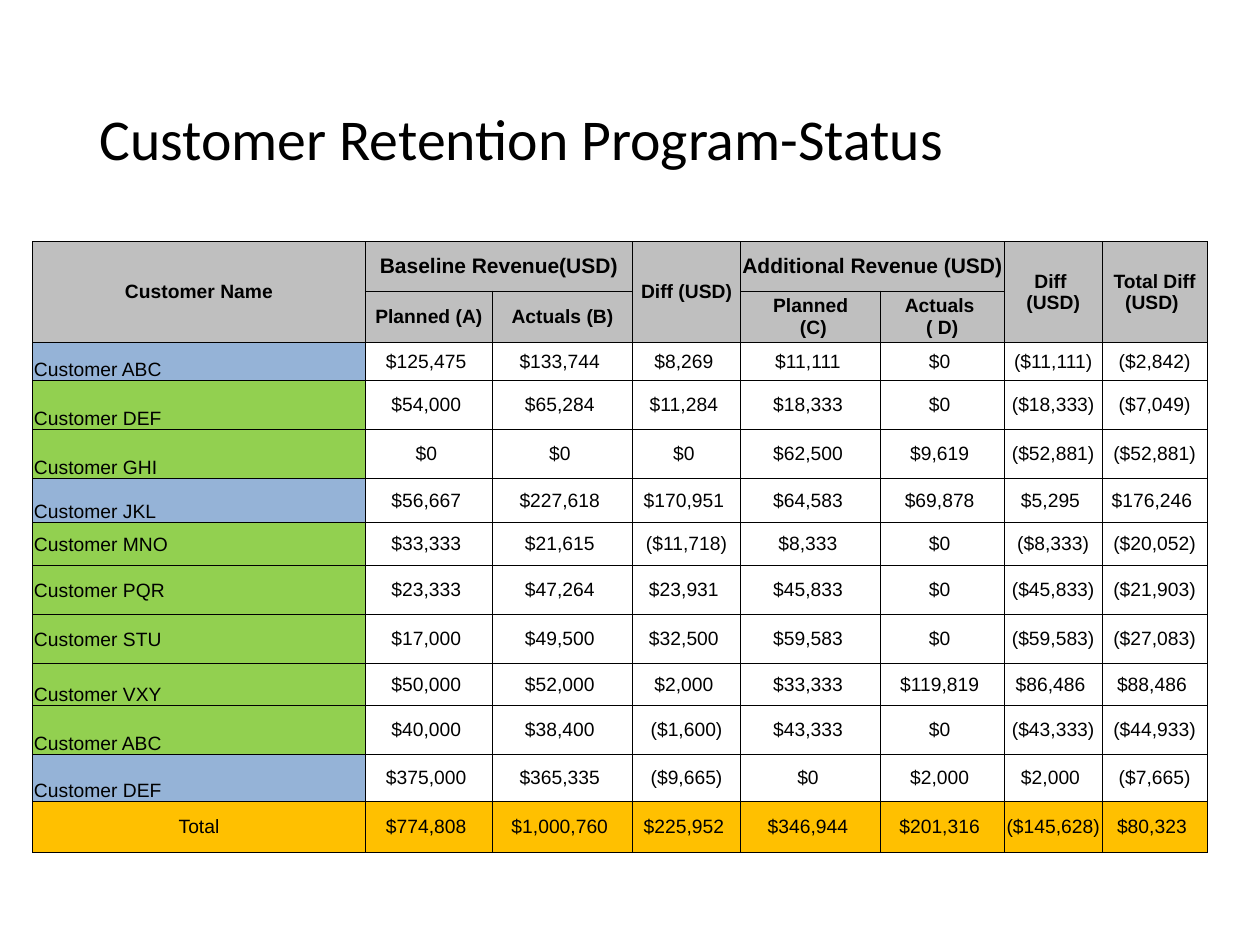
from lxml.etree import SubElement
from pptx import Presentation
from pptx.dml.color import RGBColor
from pptx.enum.text import MSO_ANCHOR, PP_ALIGN
from pptx.oxml.ns import qn
from pptx.util import Inches, Pt

TITLE = "Customer Retention Program-Status"
HEADS = [
    (1, 0, 2, 1, "Customer Name", 11),
    (1, 1, 1, 2, "Baseline Revenue(USD)", 12),
    (1, 3, 2, 1, "Diff (USD)", 11),
    (1, 4, 1, 2, "Additional Revenue (USD)", 12),
    (1, 6, 2, 1, "Diff \n(USD)", 11),
    (1, 7, 2, 1, "Total Diff (USD) ", 11),
    (2, 1, 1, 1, "Planned (A)", 11),
    (2, 2, 1, 1, "Actuals (B)", 11),
    (2, 4, 1, 1, "Planned\n (C)", 11),
    (2, 5, 1, 1, "Actuals \n( D)", 11),
]
ROWS = [
    ("Customer ABC", "blue", "low", [125475, 133744, 8269, 11111, 0, -11111, -2842]),
    ("Customer DEF", "green", "low", [54000, 65284, 11284, 18333, 0, -18333, -7049]),
    ("Customer GHI", "green", "low", [0, 0, 0, 62500, 9619, -52881, -52881]),
    ("Customer JKL", "blue", "low", [56667, 227618, 170951, 64583, 69878, 5295, 176246]),
    ("Customer MNO", "green", "mid", [33333, 21615, -11718, 8333, 0, -8333, -20052]),
    ("Customer PQR", "green", "mid", [23333, 47264, 23931, 45833, 0, -45833, -21903]),
    ("Customer STU", "green", "mid", [17000, 49500, 32500, 59583, 0, -59583, -27083]),
    ("Customer VXY", "green", "low", [50000, 52000, 2000, 33333, 119819, 86486, 88486]),
    ("Customer ABC", "green", "low", [40000, 38400, -1600, 43333, 0, -43333, -44933]),
    ("Customer DEF", "blue", "low", [375000, 365335, -9665, 0, 2000, 2000, -7665]),
    ("Total", "gold", "mid", [774808, 1000760, 225952, 346944, 201316, -145628, 80323]),
]
WIDTHS = [2.64, 1.01, 1.11, 0.86, 1.11, 0.98, 0.78, 0.83]
HEIGHTS = [0.41, 0.39, 0.41, 0.3, 0.39, 0.39, 0.35, 0.34, 0.39, 0.39, 0.33, 0.39, 0.37, 0.41]
COLORS = {"black": "000000", "gray": "BFBFBF", "blue": "95B3D7",
          "green": "92D050", "gold": "FFC000"}
ANCHORS = {"low": MSO_ANCHOR.BOTTOM, "mid": MSO_ANCHOR.MIDDLE}
PLAIN = "{2D5ABB26-0587-4C30-8999-92F81FD0307C}"


def color(name):
    return RGBColor.from_string(COLORS[name])


def money(num):
    return f"(${-num:,})" if num < 0 else f"${num:,} "


def border(cell, sides):
    props = cell._tc.get_or_add_tcPr()
    for side in sides:
        line = SubElement(props, qn(f"a:ln{side}"), w=str(Pt(0.5)))
        fill = SubElement(line, qn("a:solidFill"))
        SubElement(fill, qn("a:srgbClr"), val=COLORS["black"])


def write(cell, text, fill=None, size=11, bold=False, align=PP_ALIGN.CENTER,
          anchor="mid", inset=0):
    cell.margin_left = cell.margin_top = cell.margin_right = Inches(inset)
    cell.margin_bottom = 0
    cell.vertical_anchor = ANCHORS[anchor]
    if fill:
        cell.fill.solid()
        cell.fill.fore_color.rgb = color(fill)
    else:
        cell.fill.background()
    par = cell.text_frame.paragraphs[0]
    par.text = text
    par.alignment = align
    style(par.font, "Arial", size, bold)


def style(font, face, size, bold=False):
    font.name = face
    font.size = Pt(size)
    font.bold = bold
    font.color.rgb = color("black")


def add_title(slide):
    box = slide.shapes.add_textbox(Inches(0.69), Inches(0.4), Inches(8.62), Inches(1.45))
    frame = box.text_frame
    frame.word_wrap = True
    frame.vertical_anchor = MSO_ANCHOR.MIDDLE
    par = frame.paragraphs[0]
    par.text = TITLE
    par.line_spacing = 0.9
    style(par.font, "Calibri", 33)


def add_grid(slide):
    frame = slide.shapes.add_table(len(HEIGHTS), len(WIDTHS), Inches(0.26), Inches(1.51),
                                   Inches(sum(WIDTHS)), Inches(sum(HEIGHTS)))
    table = frame.table
    table.first_row = table.horz_banding = False
    table._tbl.tblPr.find(qn("a:tableStyleId")).text = PLAIN
    for col, width in zip(table.columns, WIDTHS):
        col.width = Inches(width)
    for row, height in zip(table.rows, HEIGHTS):
        row.height = Inches(height)
    for num, row in enumerate(table.rows):
        for cell in row.cells:
            border(cell, "LRTB" if num else "B")
            write(cell, "")
    for top, left, down, across, text, size in HEADS:
        cell = table.cell(top, left)
        if down * across > 1:
            cell.merge(table.cell(top + down - 1, left + across - 1))
        write(cell, text, "gray", size, True)
    for top, (name, fill, anchor, nums) in enumerate(ROWS, 3):
        total = fill == "gold"
        align = PP_ALIGN.CENTER if total else PP_ALIGN.LEFT
        write(table.cell(top, 0), name, fill, align=align, anchor=anchor,
              inset=0 if total else 0.01)
        for left, num in enumerate(nums, 1):
            write(table.cell(top, left), money(num), fill if total else None)


def main():
    deck = Presentation()
    deck.slide_width, deck.slide_height = Inches(10), Inches(7.5)
    slide = deck.slides.add_slide(deck.slide_layouts[6])
    add_title(slide)
    add_grid(slide)
    deck.save("out.pptx")


if __name__ == "__main__":
    main()
